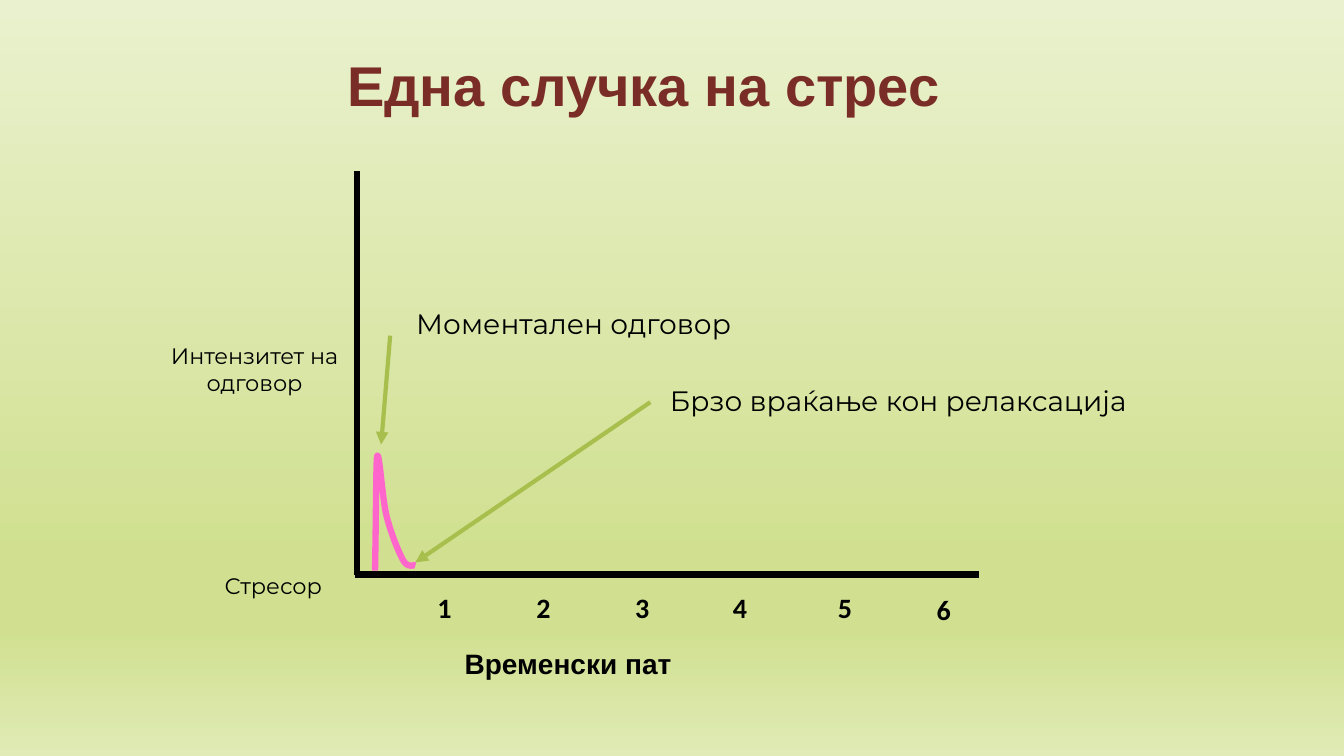
from dataclasses import dataclass
from pptx import Presentation
from pptx.dml.color import RGBColor as RGB
from pptx.enum.shapes import MSO_CONNECTOR as Link
from pptx.enum.text import MSO_ANCHOR as Anchor, MSO_AUTO_SIZE as Auto, PP_ALIGN as Align
from pptx.oxml import parse_xml
from pptx.oxml.ns import nsdecls
from pptx.util import Inches, Pt


@dataclass(frozen=True)
class Theme:
    ink: str = "000000"
    title: str = "7A2D26"
    curve: str = "FF66CC"
    arrow: str = "A8BF4D"
    back: tuple = ((0, "EAF1CE"), (74, "D0E090"), (83, "D0E090"), (100, "E0EBB5"))
    head: str = "Arial"
    body: str = "Montserrat"
    digit: str = "Calibri"
    big: int = 40
    mid: int = 20
    small: int = 16
    thick: float = 4.5
    thin: float = 3


class Sheet:
    def __init__(self, slide, theme):
        self.slide, self.theme = slide, theme

    def backdrop(self):
        stops = "".join(
            f'<a:gs pos="{pos * 1000}"><a:srgbClr val="{tone}"/></a:gs>'
            for pos, tone in self.theme.back)
        fill = self.slide.background.fill
        fill.solid()
        solid = self.slide.element.cSld.bg.bgPr[0]
        grad = parse_xml(
            f'<a:gradFill {nsdecls("a")} rotWithShape="1"><a:gsLst>{stops}</a:gsLst>'
            '<a:lin ang="5400000" scaled="0"/></a:gradFill>')
        solid.getparent().replace(solid, grad)

    def style(self, para, text, face, size, tone, bold, align):
        para.text, para.alignment = text, align
        font = para.font
        font.name, font.size, font.bold = face, Pt(size), bold
        font.color.rgb = RGB.from_string(tone)

    def title(self, text, *box):
        shape = self.slide.shapes.title
        shape.left, shape.top, shape.width, shape.height = map(Inches, box)
        frame = shape.text_frame
        frame.vertical_anchor = Anchor.MIDDLE
        look = self.theme
        self.style(frame.paragraphs[0], text, look.head, look.big,
                   look.title, True, Align.CENTER)

    def label(self, text, box, face, size, bold=False, align=Align.CENTER):
        frame = self.slide.shapes.add_textbox(*map(Inches, box)).text_frame
        frame.word_wrap = True
        frame.auto_size = Auto.SHAPE_TO_FIT_TEXT
        self.style(frame.paragraphs[0], text, face, size, self.theme.ink, bold, align)

    def line(self, start, end, tone, width, tip=False):
        link = self.slide.shapes.add_connector(
            Link.STRAIGHT, *map(Inches, (*start, *end)))
        link.line.color.rgb = RGB.from_string(tone)
        link.line.width = Pt(width)
        if tip:
            link.line._get_or_add_ln().append(
                parse_xml(f'<a:tailEnd {nsdecls("a")} type="triangle"/>'))
        link._element.spPr.append(parse_xml(f'<a:effectLst {nsdecls("a")}/>'))

    def curve(self, start, arcs, tone, width, steps=16):
        dots, last = [], start
        for one, two, end in arcs:
            for step in range(1, steps + 1):
                t = step / steps
                u = 1 - t
                dots.append(tuple(
                    Inches(u**3 * a + 3 * u * u * t * b + 3 * u * t * t * c + t**3 * d)
                    for a, b, c, d in zip(last, one, two, end)))
            last = end
        pen = self.slide.shapes.build_freeform(*map(Inches, start))
        pen.add_line_segments(dots, close=False)
        shape = pen.convert_to_shape()
        shape.shadow.inherit = False
        shape.fill.background()
        shape.line.color.rgb = RGB.from_string(tone)
        shape.line.width = Pt(width)


def main():
    deck = Presentation()
    deck.slide_width, deck.slide_height = Inches(13.33), Inches(7.5)
    look = Theme()
    sheet = Sheet(deck.slides.add_slide(deck.slide_layouts[5]), look)
    sheet.backdrop()
    sheet.title("Една случка на стрес", 1.88, 0.21, 9, 1.25)

    # Axes
    sheet.line((3.54, 1.7), (3.54, 5.7), look.ink, look.thick)
    sheet.line((3.52, 5.7), (9.71, 5.7), look.ink, look.thick)
    sheet.label("Стресор", (2.13, 5.63, 1.31, 0.37), look.body, look.small,
                align=Align.LEFT)
    sheet.label("Интензитет на одговор", (1.37, 3.35, 2.31, 0.64),
                look.body, look.small)

    # Stress response
    sheet.curve((3.72, 5.66), [
        ((3.73, 5.14), (3.73, 4.62), (3.74, 4.53)),
        ((3.76, 4.44), (3.79, 4.92), (3.83, 5.1)),
        ((3.87, 5.27), (3.95, 5.47), (4, 5.56)),
        ((4.05, 5.64), (4.1, 5.6), (4.12, 5.61)),
    ], look.curve, look.thick)

    # Callouts
    sheet.line((6.45, 3.99), (4.12, 5.58), look.arrow, look.thin, tip=True)
    sheet.line((3.87, 3.33), (3.78, 4.41), look.arrow, look.thin, tip=True)
    sheet.label("Моментален одговор", (3.7, 2.99, 3.98, 0.44), look.body, look.mid)
    sheet.label("Брзо враќање кон релаксација", (6.28, 3.76, 5.26, 0.44),
                look.body, look.mid)

    # Time scale
    wide = 0.36
    spots = (4.41, 5.39, 6.37, 7.34, 8.38, 9.36)
    for num, mid in enumerate(spots, 1):
        top = 5.83 if num == len(spots) else 5.81
        sheet.label(str(num), (mid - wide / 2, top, wide, 0.43),
                    look.digit, look.mid, bold=True)
    sheet.label("Временски пат", (4.51, 6.36, 5.67, 0.44), look.head, look.mid,
                bold=True, align=Align.LEFT)
    deck.save("out.pptx")


if __name__ == "__main__":
    main()
